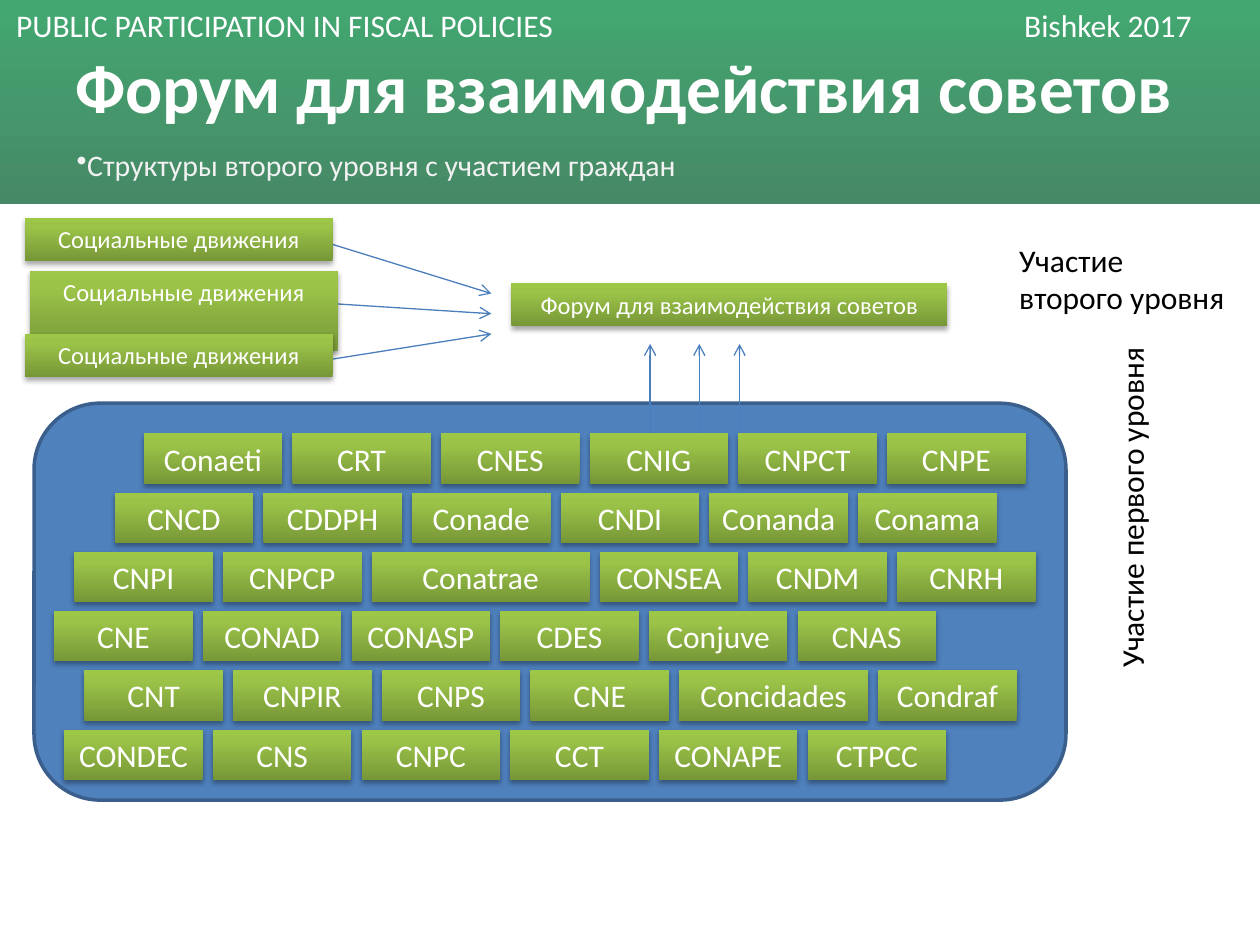
from lxml import etree
from pptx import Presentation
from pptx.dml.color import RGBColor
from pptx.enum.shapes import MSO_CONNECTOR, MSO_SHAPE
from pptx.enum.text import MSO_ANCHOR, PP_ALIGN
from pptx.oxml import parse_xml
from pptx.oxml.ns import nsdecls, qn
from pptx.util import Inches, Pt

RECT, ROUNDED = MSO_SHAPE.RECTANGLE, MSO_SHAPE.ROUNDED_RECTANGLE
STRAIGHT = MSO_CONNECTOR.STRAIGHT
TOP, MIDDLE = MSO_ANCHOR.TOP, MSO_ANCHOR.MIDDLE
LEFT, CENTER = PP_ALIGN.LEFT, PP_ALIGN.CENTER

# Content
EVENT, VENUE = "PUBLIC PARTICIPATION IN FISCAL POLICIES", "Bishkek 2017"
TITLE = "Форум для взаимодействия советов"
SUBTITLE = "Структуры второго уровня с участием граждан"
FORUM = "Форум для взаимодействия советов"
MOVEMENT = "Социальные движения"
SECOND_LEVEL = ["Участие", "второго уровня"]
FIRST_LEVEL = ["Участие первого уровня"]
COUNCIL_ROWS = [  # left edge of the row, councils
    (1.14, ["Conaeti", "CRT", "CNES", "CNIG", "CNPCT", "CNPE"]),
    (0.91, ["CNCD", "CDDPH", "Conade", "CNDI", "Conanda", "Conama"]),
    (0.59, ["CNPI", "CNPCP", "Conatrae", "CONSEA", "CNDM", "CNRH"]),
    (0.43, ["CNE", "CONAD", "CONASP", "CDES", "Conjuve", "CNAS"]),
    (0.67, ["CNT", "CNPIR", "CNPS", "CNE", "Concidades", "Condraf"]),
    (0.51, ["CONDEC", "CNS", "CNPC", "CCT", "CONAPE", "CTPCC"]),
]
WIDE_COUNCILS = {"Conatrae": 1.73, "Concidades": 1.5}
MOVEMENT_BOXES = [(0.2, 1.73, 0.34), (0.24, 2.15, 0.64), (0.2, 2.65, 0.34)]
ARROWS = [  # from x, y, to x, y
    (2.64, 1.94, 3.9, 2.33), (2.64, 2.41, 3.9, 2.49), (2.64, 2.85, 3.9, 2.65),
    (5.16, 3.59, 5.16, 2.73), (5.55, 3.59, 5.55, 2.73), (5.87, 3.64, 5.87, 2.73),
]

# Style
FONT = "Calibri"
COLORS = {
    "white": "FFFFFF", "black": "000000", "subtitle": "F2F2F2",
    "panel": "4F81BD", "panel_line": "3A5F8C", "arrow": "4B7EBC",
}
HEADER_STOPS = [(0, "43A771"), (100, "468966")]
GREEN_STOPS = [(0, "779737"), (80, "9BC348"), (100, "9DC746")]
COUNCIL_W, COUNCIL_H, COUNCIL_GAP = 1.1, 0.4, 0.08
ROW_TOP, ROW_STEP = 3.44, 0.47

prs = Presentation()
prs.slide_width, prs.slide_height = Inches(10), Inches(7.5)
slide = prs.slides.add_slide(prs.slide_layouts[6])


def color(name):
    return RGBColor.from_string(COLORS[name])


def write(shape, lines, size, color_name="white", align=LEFT, anchor=TOP, wrap=True):
    frame = shape.text_frame
    frame.word_wrap, frame.vertical_anchor = wrap, anchor
    frame.text = "\n".join(lines)
    for paragraph in frame.paragraphs:
        paragraph.alignment = align
        paragraph.font.name, paragraph.font.size = FONT, Pt(size)
        paragraph.font.color.rgb = color(color_name)
    return frame.paragraphs[0]


def add_text(box, lines, size, **style):
    return write(slide.shapes.add_textbox(*map(Inches, box)), lines, size, **style)


def add_block(kind, box):
    block = slide.shapes.add_shape(kind, *map(Inches, box))
    block.shadow.inherit = False
    block.line.fill.background()
    return block


def fill_gradient(shape, stops, angle):
    marks = "".join(f'<a:gs pos="{at * 1000}"><a:srgbClr val="{hue}"/></a:gs>'
                    for at, hue in stops)
    shape._element.spPr.find(qn("a:prstGeom")).addnext(parse_xml(
        f'<a:gradFill {nsdecls("a")} rotWithShape="1"><a:gsLst>{marks}</a:gsLst>'
        f'<a:lin ang="{angle * 60000}" scaled="0"/></a:gradFill>'))


def add_green_box(box, label, size):
    green = add_block(RECT, box)
    fill_gradient(green, GREEN_STOPS, 270)
    effects = green._element.spPr.find(qn("a:effectLst"))
    effects.append(parse_xml(
        f'<a:outerShdw {nsdecls("a")} blurRad="{Pt(3.1)}" dist="{Pt(1.8)}" dir="5400000"'
        ' rotWithShape="0"><a:srgbClr val="000000"><a:alpha val="35000"/></a:srgbClr>'
        '</a:outerShdw>'))
    write(green, [label], size, align=CENTER)


def add_arrow(ends):
    arrow = slide.shapes.add_connector(STRAIGHT, *map(Inches, ends))
    arrow.line.color.rgb, arrow.line.width = color("arrow"), Pt(0.75)
    etree.SubElement(arrow.line._get_or_add_ln(), qn("a:tailEnd"), type="arrow")
    etree.SubElement(arrow._element.spPr, qn("a:effectLst"))


# Header band, with the venue on a tab stop
fill_gradient(add_block(RECT, (0, 0, 10, 1.62)), HEADER_STOPS, 90)
event = add_text((0.03, 0, 9.78, 0.4), [f"{EVENT}\t{VENUE}"], 18)
tabs = etree.Element(qn("a:tabLst"))
etree.SubElement(tabs, qn("a:tab"), pos=str(Inches(8)), algn="l")
event._p.get_or_add_pPr().insert(0, tabs)

title = add_text((0.5, 0.3, 9, 0.77), [TITLE], 39.6, anchor=MIDDLE)
title.font.bold = True
subtitle = add_text((0.51, 1.07, 8.98, 0.47), [SUBTITLE], 17,
                    color_name="subtitle", anchor=MIDDLE)
bullet = etree.Element(qn("a:buChar"), char="•")
subtitle._p.get_or_add_pPr().insert(0, bullet)

# Panel behind the councils
panel = add_block(ROUNDED, (0.27, 3.2, 8.19, 3.15))
panel.fill.solid()
panel.fill.fore_color.rgb = color("panel")
panel.line.color.rgb, panel.line.width = color("panel_line"), Pt(2)

# Arrows into the forum, partly covered by the boxes
for ends in ARROWS:
    add_arrow(ends)

# Councils
for row, (x, councils) in enumerate(COUNCIL_ROWS):
    for council in councils:
        width = WIDE_COUNCILS.get(council, COUNCIL_W)
        add_green_box((x, ROW_TOP + row * ROW_STEP, width, COUNCIL_H), council, 18)
        x += width + COUNCIL_GAP

# Forum and social movements
add_green_box((4.06, 2.25, 3.46, 0.34), FORUM, 14)
for x, y, height in MOVEMENT_BOXES:
    add_green_box((x, y, 2.44, height), MOVEMENT, 14)

# Level labels
add_text((7.99, 1.86, 1.85, 1.01), SECOND_LEVEL, 18, color_name="black", wrap=False)
add_text((8.78, 2.73, 0.5, 2.67), FIRST_LEVEL, 18, color_name="black", wrap=False)
slide.shapes[-1].text_frame._txBody.bodyPr.set("vert", "vert270")

prs.save("out.pptx")
